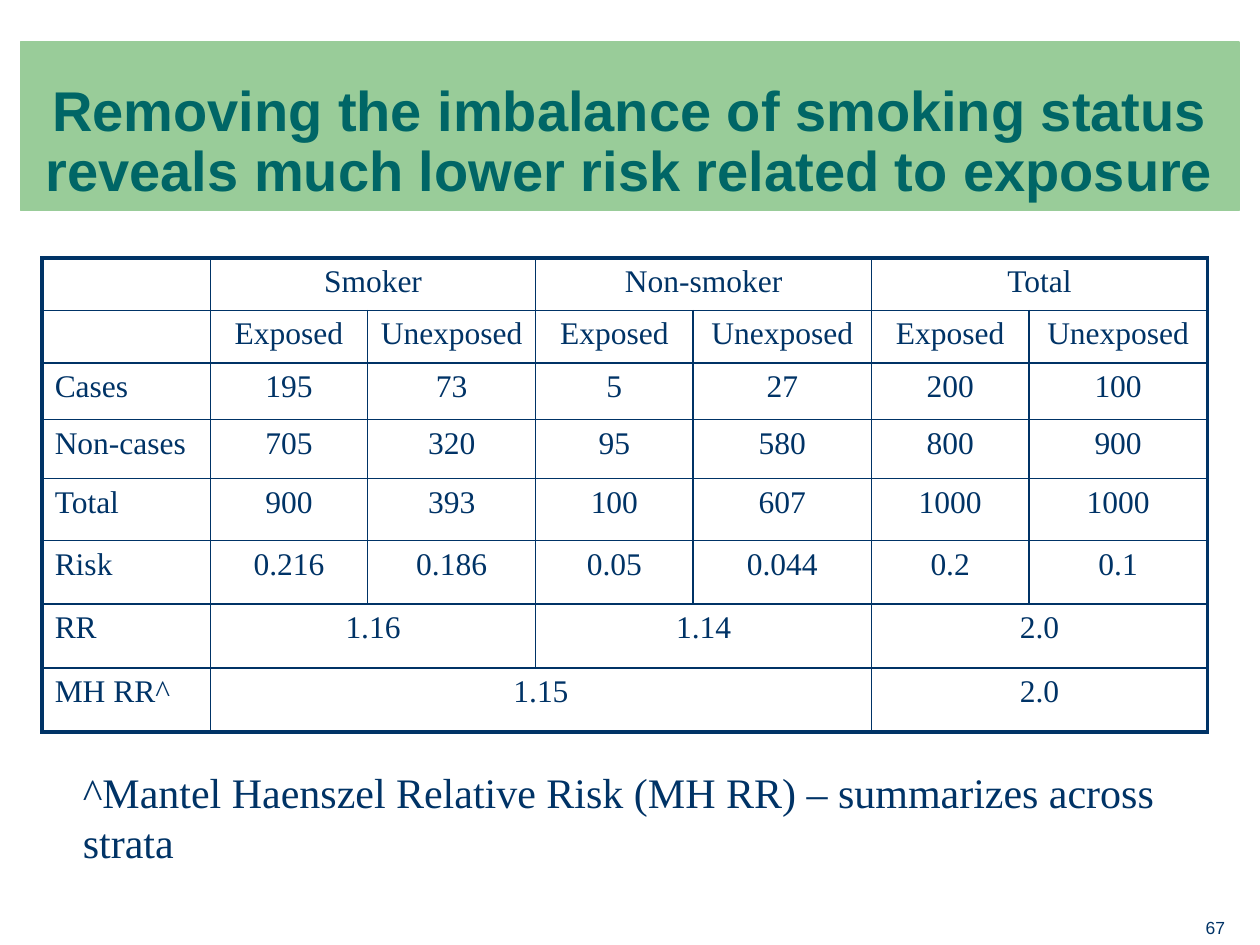
from dataclasses import dataclass

import pptx
import pptx.dml.color
import pptx.enum.shapes
import pptx.enum.text
import pptx.oxml.ns
import pptx.util
from lxml import etree

Cm = pptx.util.Cm
Pt = pptx.util.Pt
RGBColor = pptx.dml.color.RGBColor
PP_ALIGN = pptx.enum.text.PP_ALIGN
MSO_ANCHOR = pptx.enum.text.MSO_ANCHOR
qn = pptx.oxml.ns.qn

NAVY = RGBColor(0x00, 0x33, 0x66)
TEAL = RGBColor(0x00, 0x66, 0x66)
GREEN = RGBColor(0x99, 0xCC, 0x99)
SERIF = "Times New Roman"
SANS = "Arial"
INNER, OUTER = Pt(1), Pt(2.25)


@dataclass(frozen=True)
class TextStyle:
    font: str
    size: float
    color: RGBColor = NAVY
    bold: bool = False
    align: PP_ALIGN = PP_ALIGN.LEFT


@dataclass(frozen=True)
class Row:
    height: float
    label: str
    values: tuple[str, ...]
    spans: tuple[int, ...] = (1,) * 6


TITLE = TextStyle(SANS, 32, TEAL, True, PP_ALIGN.CENTER)
LABEL = TextStyle(SERIF, 18)
VALUE = TextStyle(SERIF, 18, align=PP_ALIGN.CENTER)
NOTE = TextStyle(SERIF, 24)
PAGE = TextStyle(SANS, 10, align=PP_ALIGN.CENTER)

COL_WIDTHS = (3.39, 3.17, 3.39, 3.17, 3.6, 3.17, 3.6)
PAIRS = (2, 2, 2)
ROWS = (
    Row(1.06, "", ("Smoker", "Non-smoker", "Total"), PAIRS),
    Row(1.06, "", ("Exposed", "Unexposed") * 3),
    Row(1.14, "Cases", ("195", "73", "5", "27", "200", "100")),
    Row(1.19, "Non-cases", ("705", "320", "95", "580", "800", "900")),
    Row(1.25, "Total", ("900", "393", "100", "607", "1000", "1000")),
    Row(1.28, "Risk", ("0.216", "0.186", "0.05", "0.044", "0.2", "0.1")),
    Row(1.29, "RR", ("1.16", "1.14", "2.0"), PAIRS),
    Row(1.29, "MH RR^", ("1.15", "2.0"), (4, 2)),
)


def write(tf, text: str, style: TextStyle):
    p = tf.paragraphs[0]
    p.alignment = style.align
    r = p.add_run()
    r.text = text
    r.font.name = style.font
    r.font.size = Pt(style.size)
    r.font.bold = style.bold
    r.font.color.rgb = style.color
    return p


def add_title(s, text: str) -> None:
    sp = s.shapes.add_shape(pptx.enum.shapes.MSO_SHAPE.RECTANGLE,
                            Cm(0.42), Cm(0.85), Cm(24.56), Cm(3.39))
    sp.shadow.inherit = False
    sp.fill.solid()
    sp.fill.fore_color.rgb = GREEN
    sp.line.color.rgb = GREEN
    sp.line.width = Pt(0.75)
    tf = sp.text_frame
    tf.word_wrap = True
    tf.vertical_anchor = MSO_ANCHOR.BOTTOM
    write(tf, text, TITLE).line_spacing = 0.9


def add_text(s, box: tuple[float, ...], text: str, style: TextStyle, wrap: bool) -> None:
    tf = s.shapes.add_textbox(*map(Cm, box)).text_frame
    tf.word_wrap = wrap
    tf.auto_size = pptx.enum.text.MSO_AUTO_SIZE.SHAPE_TO_FIT_TEXT
    write(tf, text, style)


def set_borders(cell, widths: dict[str, int]) -> None:
    tc_pr = cell._tc.get_or_add_tcPr()
    for side, width in widths.items():
        ln = etree.SubElement(tc_pr, qn(f"a:ln{side}"), w=str(int(width)))
        fill = etree.SubElement(ln, qn("a:solidFill"))
        etree.SubElement(fill, qn("a:srgbClr"), val=str(NAVY))


def fill_cell(table, row: int, col: int, span: int, text: str, style: TextStyle) -> None:
    cell = table.cell(row, col)
    end = col + span
    if span > 1:
        cell.merge(table.cell(row, end - 1))
    widths = {
        "L": OUTER if col == 0 else INNER,
        "R": OUTER if end == len(COL_WIDTHS) else INNER,
        "T": OUTER if row == 0 else INNER,
        "B": OUTER if row == len(ROWS) - 1 else INNER,
    }
    for c in range(col, end):
        set_borders(table.cell(row, c), widths)
        table.cell(row, c).fill.background()
    write(cell.text_frame, text, style)


def add_risk_table(s) -> None:
    table = s.shapes.add_table(
        len(ROWS), len(COL_WIDTHS), Cm(0.85), Cm(5.2),
        Cm(sum(COL_WIDTHS)), Cm(sum(row.height for row in ROWS))).table
    table.first_row = False
    table.horz_banding = False
    for column, width in zip(table.columns, COL_WIDTHS):
        column.width = Cm(width)
    for i, row in enumerate(ROWS):
        table.rows[i].height = Cm(row.height)
        fill_cell(table, i, 0, 1, row.label, LABEL)
        col = 1
        for text, span in zip(row.values, row.spans):
            fill_cell(table, i, col, span, text, VALUE)
            col += span


def main() -> None:
    """Build the slide on smoking-adjusted relative risk."""
    prs = pptx.Presentation()
    prs.slide_width, prs.slide_height = Cm(25.4), Cm(19.05)
    s = prs.slides.add_slide(prs.slide_layouts[6])
    add_text(s, (24.03, 18.36, 0.94, 0.69), "67", PAGE, False)
    add_title(s, "Removing the imbalance of smoking status "
                 "reveals much lower risk related to exposure")
    add_risk_table(s)
    add_text(s, (1.42, 15.32, 22.5, 1.02),
             "^Mantel Haenszel Relative Risk (MH RR) – summarizes across strata", NOTE, True)
    prs.save("out.pptx")


if __name__ == "__main__":
    main()
